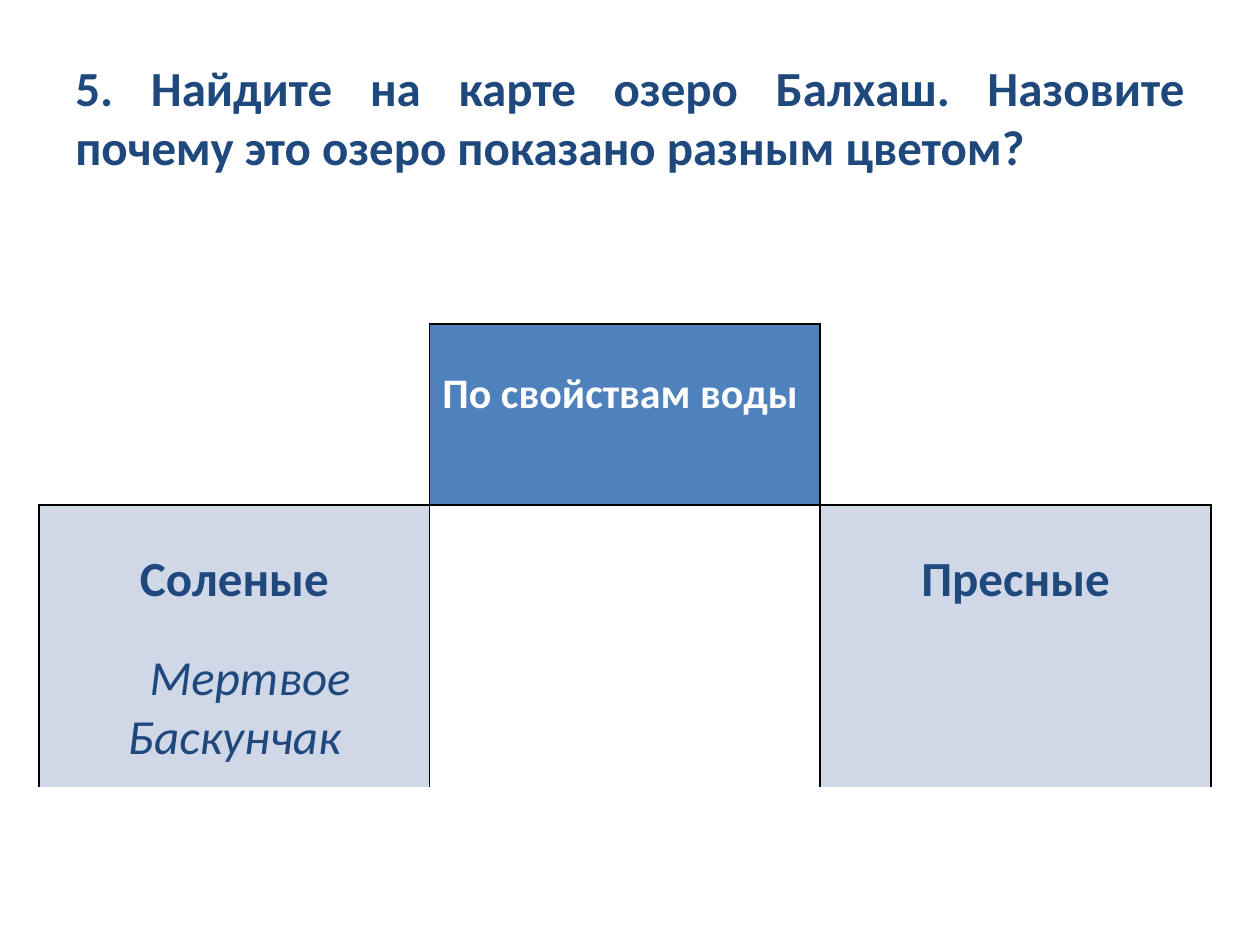
from lxml.etree import SubElement
from pptx import Presentation
from pptx.dml.color import RGBColor
from pptx.enum.text import MSO_ANCHOR as Anchor, PP_ALIGN as Align
from pptx.oxml.ns import qn
from pptx.util import Emu, Inches, Pt

NAVY, BLUE, PALE, WHITE, BLACK = "1F497D", "4F81BD", "D0D8E8", "FFFFFF", "000000"
PLAIN_STYLE = "{2D5ABB26-0587-4C30-8999-92F81FD0307C}"
BLANK_LINE = 22
BORDERS = [
    ["RB", "LRTB", "LB"],
    ["LRT", "LRT", "LRT"],
    ["LRB", "LR", "LRB"],
]


def paint(color_format, color):
    color_format.rgb = RGBColor.from_string(color)


def style(paragraph, size, color, bold=True, italic=False, align=Align.CENTER):
    paragraph.alignment = align
    for run in paragraph.runs:
        font = run.font
        font.name, font.size = "Calibri", Pt(size)
        font.bold, font.italic = bold, italic
        paint(font.color, color)


def add_question(slide, box, text):
    frame = slide.shapes.add_textbox(*box).text_frame
    frame.word_wrap = True
    frame.vertical_anchor = Anchor.MIDDLE
    question = frame.paragraphs[0]
    question.text = text
    style(question, 28, NAVY, align=Align.JUSTIFY)


def draw_borders(cell, sides):
    properties = cell._tc.get_or_add_tcPr()
    for side in "LRTB":
        line = SubElement(properties, qn(f"a:ln{side}"), w=str(Pt(1)))
        if side in sides:
            fill = SubElement(line, qn("a:solidFill"))
            SubElement(fill, qn("a:srgbClr"), val=BLACK)
        else:
            SubElement(line, qn("a:noFill"))


def fill_cell(cell, color, heading, size, text_color, examples=()):
    cell.fill.solid()
    paint(cell.fill.fore_color, color)
    cell.margin_top = Inches(0.05) + Pt(BLANK_LINE)
    frame = cell.text_frame
    frame.text = "\n".join([heading, *examples])
    title, *lakes = frame.paragraphs
    style(title, size, text_color)
    for lake in lakes:
        style(lake, size, text_color, bold=False, italic=True)
    if lakes:
        lakes[0].space_before = Pt(BLANK_LINE)
        lakes[0]._p.get_or_add_pPr().set("marL", str(Inches(0.25)))


def add_classification(slide, box):
    table = slide.shapes.add_table(3, 3, *box).table
    table.first_row = table.horz_banding = False
    table._tbl.tblPr.find(qn("a:tableStyleId")).text = PLAIN_STYLE
    for row, height in zip(table.rows, (1.44, 1.12, 1.12)):
        row.height = Inches(height)
    for row, row_borders in enumerate(BORDERS):
        for column, sides in enumerate(row_borders):
            cell = table.cell(row, column)
            draw_borders(cell, sides)
            cell.fill.background()
    for column in (0, 2):
        table.cell(1, column).merge(table.cell(2, column))
    fill_cell(table.cell(0, 1), BLUE, "По свойствам воды ", 24, WHITE)
    fill_cell(table.cell(1, 0), PALE, "Соленые", 28, NAVY, ("Мертвое", "Баскунчак"))
    fill_cell(table.cell(1, 2), PALE, "Пресные", 28, NAVY)


def main():
    deck = Presentation()
    deck.slide_width, deck.slide_height = Inches(10), Inches(7.5)
    slide = deck.slides.add_slide(deck.slide_layouts[6])

    def area(left, top, width, height):
        return (
            Emu(int(deck.slide_width * left)),
            Emu(int(deck.slide_height * top)),
            Emu(int(deck.slide_width * width)),
            Emu(int(deck.slide_height * height)),
        )

    add_question(
        slide,
        area(0.05, 0.04, 0.9, 1 / 6),
        "5. Найдите на карте озеро Балхаш. Назовите почему это озеро показано разным цветом?",
    )
    add_classification(slide, area(0.031, 2.57 / 7.5, 0.93, 3.68 / 7.5))
    deck.save("out.pptx")


if __name__ == "__main__":
    main()
